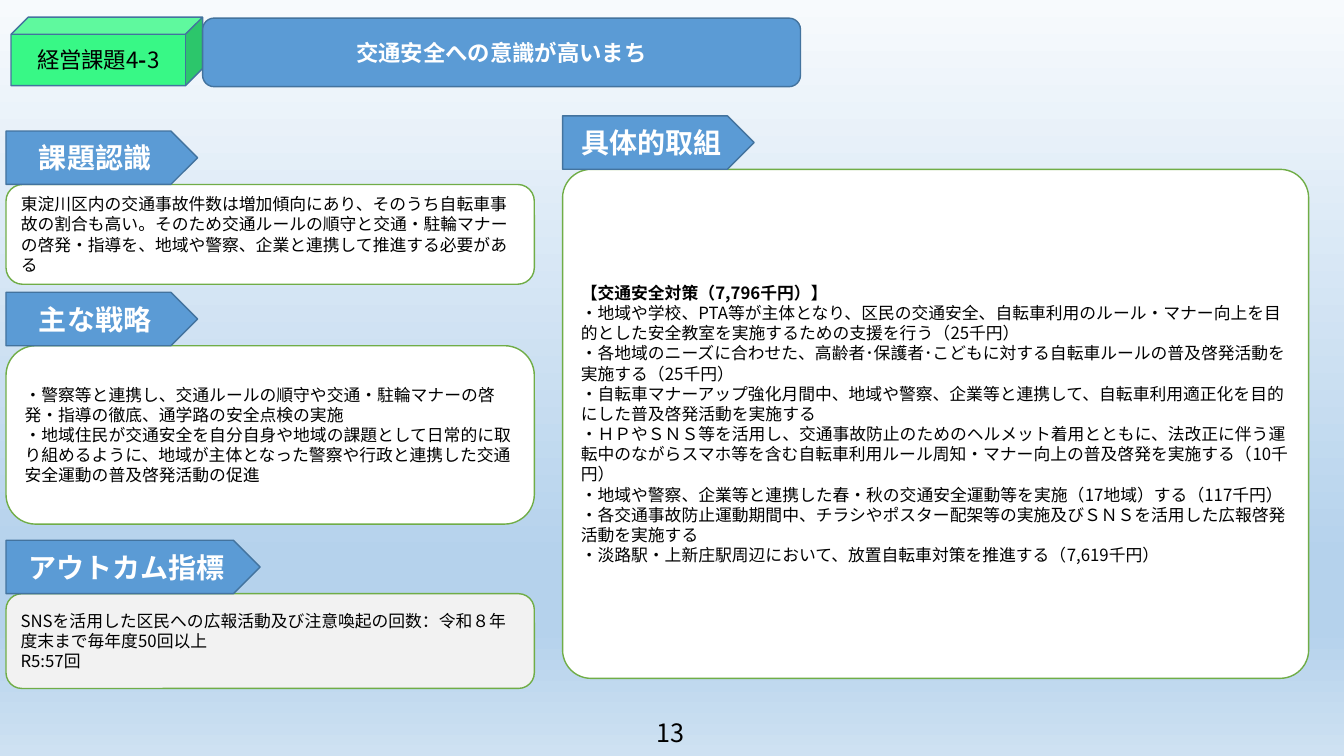
from dataclasses import dataclass

from lxml import etree
from pptx import Presentation
from pptx.dml.color import RGBColor
from pptx.enum.shapes import MSO_SHAPE
from pptx.enum.text import MSO_ANCHOR, MSO_AUTO_SIZE, PP_ALIGN
from pptx.oxml.ns import qn
from pptx.util import Inches, Pt

ROUND, ARROW, CUBE = MSO_SHAPE.ROUNDED_RECTANGLE, MSO_SHAPE.PENTAGON, MSO_SHAPE.CUBE
LEFT, CENTER = PP_ALIGN.LEFT, PP_ALIGN.CENTER
MIDDLE = MSO_ANCHOR.MIDDLE
GROW = MSO_AUTO_SIZE.SHAPE_TO_FIT_TEXT


@dataclass(frozen=True)
class Theme:
    font: str = "Noto Sans CJK JP"
    blue: str = "5B9BD5"
    blue_line: str = "43739E"
    green: str = "38F886"
    green_line: str = "70AD47"
    white: str = "FFFFFF"
    grey: str = "F2F2F2"
    black: str = "000000"
    background: tuple = ((0, "F7FAFD"), (74, "B5D2EC"), (83, "B5D2EC"), (100, "CEE1F2"))
    body: int = 12
    title: int = 16
    page: int = 18
    heading: int = 20


THEME = Theme()


@dataclass(frozen=True)
class Run:
    text: str
    bold: bool = False


@dataclass(frozen=True)
class Style:
    size: int
    color: str
    align: PP_ALIGN = LEFT


@dataclass(frozen=True)
class Box:
    kind: MSO_SHAPE
    at: tuple[float, float, float, float]
    fill: str
    line: str
    style: Style
    paragraphs: list[list[Run]]
    corner: float | None = None


BODY = Style(THEME.body, THEME.black)
HEADING = Style(THEME.heading, THEME.white, CENTER)
TITLE = Style(THEME.title, THEME.white, CENTER)
TAG = Style(THEME.title, THEME.black, CENTER)
PAGE = Style(THEME.page, THEME.black)

LEFT_X, RIGHT_X = 0.06, 5.58
LEFT_W, RIGHT_W = 5.24, 7.4
HEADING_W, HEADING_H = 1.9, 0.53


@dataclass(frozen=True)
class Section:
    heading: str
    x: float
    top: float
    width: float
    height: float
    lines: list[Run]
    heading_width: float = HEADING_W
    fill: str = THEME.white
    corner: float | None = None

    def boxes(self) -> list[Box]:
        """Return the panel and the heading arrow that sits on top of it."""
        panel = (self.x, self.top + HEADING_H, self.width, self.height)
        arrow = (self.x, self.top, self.heading_width, HEADING_H)
        return [
            Box(ROUND, panel, self.fill, THEME.green_line, BODY,
                [[line] for line in self.lines], self.corner),
            Box(ARROW, arrow, THEME.blue, THEME.blue_line, HEADING,
                [[Run(self.heading, True)]]),
        ]


SECTIONS = [
    Section("課題認識", LEFT_X, 1.3, LEFT_W, 0.99, [
        Run("東淀川区内の交通事故件数は増加傾向にあり、そのうち自転車事故の割合も高い。そのため交通ルールの順守と交通・駐輪マナーの啓発・指導を、地域や警察、企業と連携して推進する必要がある"),
    ]),
    Section("主な戦略", LEFT_X, 2.9, LEFT_W, 1.77, [
        Run("・警察等と連携し、交通ルールの順守や交通・駐輪マナーの啓発・指導の徹底、通学路の安全点検の実施"),
        Run("・地域住民が交通安全を自分自身や地域の課題として日常的に取り組めるように、地域が主体となった警察や行政と連携した交通安全運動の普及啓発活動の促進"),
    ]),
    Section("アウトカム指標", LEFT_X, 5.36, LEFT_W, 0.94, [
        Run("SNSを活用した区民への広報活動及び注意喚起の回数：令和８年度末まで毎年度50回以上"),
        Run("R5:57回"),
    ], heading_width=2.52, fill=THEME.grey),
    Section("具体的取組", RIGHT_X, 1.15, RIGHT_W, 5.05, [
        Run("【交通安全対策（7,796千円）】", True),
        Run("・地域や学校、PTA等が主体となり、区民の交通安全、自転車利用のルール・マナー向上を目的とした安全教室を実施するための支援を行う（25千円）"),
        Run("・各地域のニーズに合わせた、高齢者･保護者･こどもに対する自転車ルールの普及啓発活動を実施する（25千円）"),
        Run("・自転車マナーアップ強化月間中、地域や警察、企業等と連携して、自転車利用適正化を目的にした普及啓発活動を実施する"),
        Run("・ＨＰやＳＮＳ等を活用し、交通事故防止のためのヘルメット着用とともに、法改正に伴う運転中のながらスマホ等を含む自転車利用ルール周知・マナー向上の普及啓発を実施する（10千円）"),
        Run("・地域や警察、企業等と連携した春・秋の交通安全運動等を実施（17地域）する（117千円）"),
        Run("・各交通事故防止運動期間中、チラシやポスター配架等の実施及びＳＮＳを活用した広報啓発活動を実施する"),
        Run("・淡路駅・上新庄駅周辺において、放置自転車対策を推進する（7,619千円）"),
    ], corner=0.056),
]

HEADER = [
    Box(CUBE, (0.11, 0.17, 1.9, 0.68), THEME.green, THEME.blue_line, TAG,
        [[Run("経営課題4"), Run("-", True), Run("3")]]),
    Box(ROUND, (2.01, 0.18, 5.93, 0.68), THEME.blue, THEME.blue_line, TITLE,
        [[Run("交通安全への意識が高いまち", True)]]),
]


def rgb(color: str) -> RGBColor:
    """Turn a hex string into a colour."""
    return RGBColor.from_string(color)


def write(tf, paragraphs: list[list[Run]], style: Style) -> None:
    """Fill a text frame run by run."""
    for i, runs in enumerate(paragraphs):
        p = tf.add_paragraph() if i else tf.paragraphs[0]
        p.alignment = style.align
        for run in runs:
            r = p.add_run()
            r.text = run.text
            r.font.name = THEME.font
            r.font.size = Pt(style.size)
            r.font.bold = run.bold
            r.font.color.rgb = rgb(style.color)
            latin = r.font._element.find(qn("a:latin"))
            ea = etree.Element(qn("a:ea"), typeface=THEME.font)
            latin.addnext(ea)


def draw_box(s, box: Box) -> None:
    """Draw one filled and outlined shape with its text."""
    sp = s.shapes.add_shape(box.kind, *map(Inches, box.at))
    sp.shadow.inherit = False
    if box.corner is not None:
        sp.adjustments[0] = box.corner
    sp.fill.solid()
    sp.fill.fore_color.rgb = rgb(box.fill)
    sp.line.color.rgb = rgb(box.line)
    sp.line.width = Pt(1)
    sp.text_frame.word_wrap = True
    sp.text_frame.vertical_anchor = MIDDLE
    write(sp.text_frame, box.paragraphs, box.style)


def paint_background(s) -> None:
    """Give the slide its vertical gradient."""
    fill = s.background.fill
    fill.gradient()
    fill.gradient_angle = 270
    stops = next(s.element.iter(qn("a:gsLst")))
    for stop in list(stops):
        stops.remove(stop)
    for percent, color in THEME.background:
        stop = etree.SubElement(stops, qn("a:gs"), pos=str(percent * 1000))
        etree.SubElement(stop, qn("a:srgbClr"), val=color)


def draw_page_number(s) -> None:
    """Write the page number at the bottom centre."""
    tf = s.shapes.add_textbox(*map(Inches, (6.41, 7.07, 0.51, 0.4))).text_frame
    tf.word_wrap = True
    tf.auto_size = GROW
    write(tf, [[Run("13")]], PAGE)


def main() -> None:
    """Build the slide and save it."""
    prs = Presentation()
    prs.slide_width, prs.slide_height = Inches(13.33), Inches(7.5)
    s = prs.slides.add_slide(prs.slide_layouts[6])
    paint_background(s)
    for section in SECTIONS:
        for box in section.boxes():
            draw_box(s, box)
    for box in HEADER:
        draw_box(s, box)
    draw_page_number(s)
    prs.save("out.pptx")


if __name__ == "__main__":
    main()
